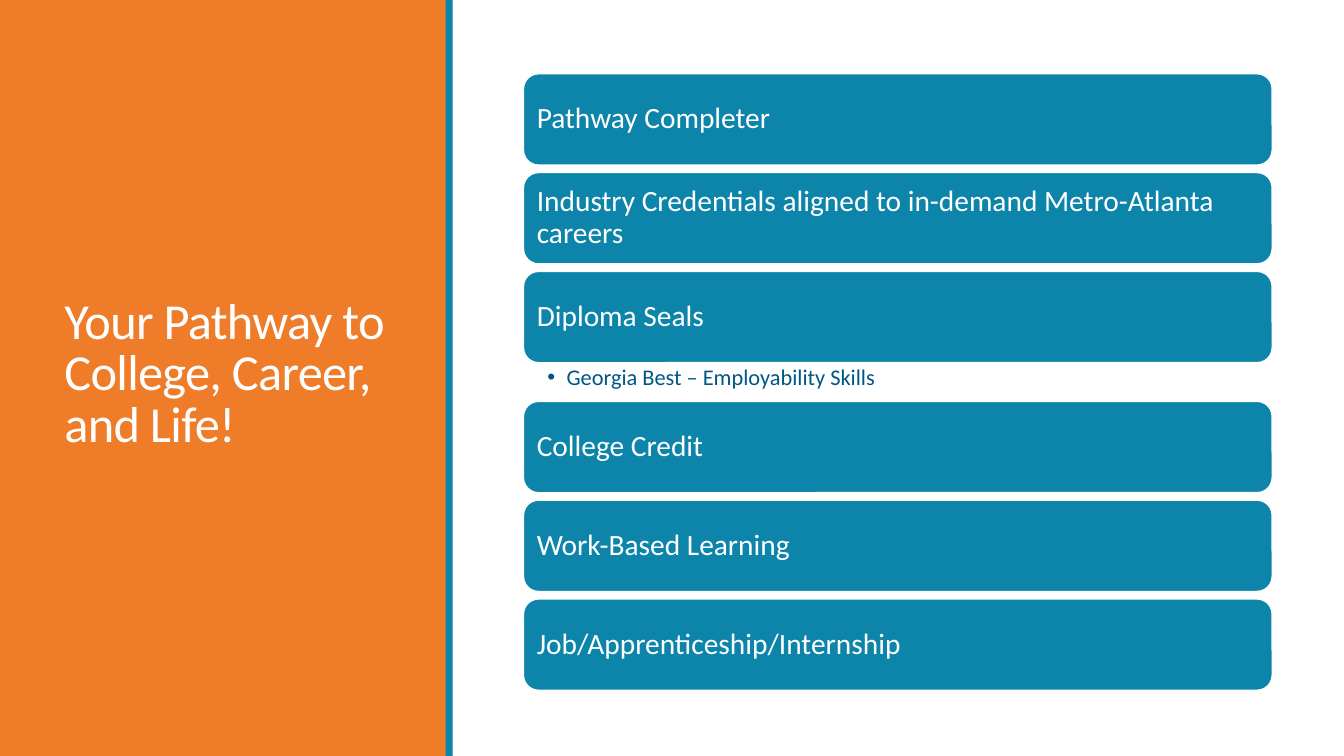
"""Build the slide on the pathway to college, career and life."""
from pptx import Presentation
from pptx.dml.color import RGBColor as RGB
from pptx.enum.shapes import MSO_SHAPE as Shape
from pptx.enum.text import MSO_ANCHOR as Anchor, PP_ALIGN as Align
from pptx.oxml.ns import qn
from pptx.util import Inches as In, Pt
from lxml.etree import SubElement as Sub

ORANGE, TEAL, NAVY, WHITE = "EE7C29", "0D85AB", "005685", "FFFFFF"
LEFT, TOP, WIDE, HIGH = 5.19, 0.73, 7.43, 0.91
STEP, NOTE_GAP = 0.98, 0.31

deck = Presentation()
deck.slide_width, deck.slide_height = In(13.33), In(7.5)
slide = deck.slides.add_slide(deck.slide_layouts[6])


def block(kind, box, fill):
    """Add a filled shape without line or shadow."""
    shape = slide.shapes.add_shape(kind, *map(In, box))
    shape.shadow.inherit = False
    shape.fill.solid()
    shape.fill.fore_color.rgb = RGB.from_string(fill)
    shape.line.fill.background()
    return shape


def write(shape, text, size, color, pads, space, anchor=Anchor.MIDDLE):
    """Set the text of a shape and return its paragraph."""
    frame = shape.text_frame
    frame.word_wrap = True
    frame.vertical_anchor = anchor
    (frame.margin_left, frame.margin_top,
     frame.margin_right, frame.margin_bottom) = map(In, pads)
    para = frame.paragraphs[0]
    para.text = text
    para.alignment = Align.LEFT
    para.line_spacing = space
    return para, para.font, size, color


def_texts = []

block(Shape.RECTANGLE, (0, 0, 4.43, 7.5), ORANGE)
title = slide.shapes.add_textbox(In(0.54), In(0.57), In(3.37), In(6.31))
def_texts.append(write(title, "Your Pathway to College, Career, and Life!", 36,
                       WHITE, (0.1, 0.05, 0.1, 0.05), 0.85))
title.text_frame.paragraphs[0].runs[0].font._element.set("spc", "-50")
block(Shape.RECTANGLE, (4.42, 0, 0.07, 7.5), TEAL)

goals = ["Pathway Completer",
         "Industry Credentials aligned to in-demand Metro-Atlanta careers",
         "Diploma Seals", "College Credit", "Work-Based Learning",
         "Job/Apprenticeship/Internship"]
for row, goal in enumerate(goals):
    top = TOP + row * STEP + (NOTE_GAP if row > 2 else 0)
    bar = block(Shape.ROUNDED_RECTANGLE, (LEFT, top, WIDE, HIGH), TEAL)
    bar.line.color.rgb = RGB.from_string(WHITE)
    bar.line.width = Pt(1.25)
    def_texts.append(write(bar, goal, 21, WHITE, [0.09] * 4, 0.9))

note = slide.shapes.add_textbox(In(LEFT), In(TOP + 2 * STEP + HIGH),
                                In(WIDE), In(0.38))
item = write(note, "Georgia Best – Employability Skills", 16, NAVY,
             (0.24, 0.03, 0.16, 0.03), 0.9, Anchor.TOP)
props = item[0]._p.get_or_add_pPr()
props.set("marL", str(In(0.19)))
props.set("indent", str(In(-0.19)))
Sub(props, qn("a:buFont")).set("typeface", "Arial")
Sub(props, qn("a:buChar")).set("char", "•")
def_texts.append(item)

for para, font, size, color in def_texts:
    font.name = "Calibri"
    font.size = Pt(size)
    font.color.rgb = RGB.from_string(color)

deck.save("out.pptx")
